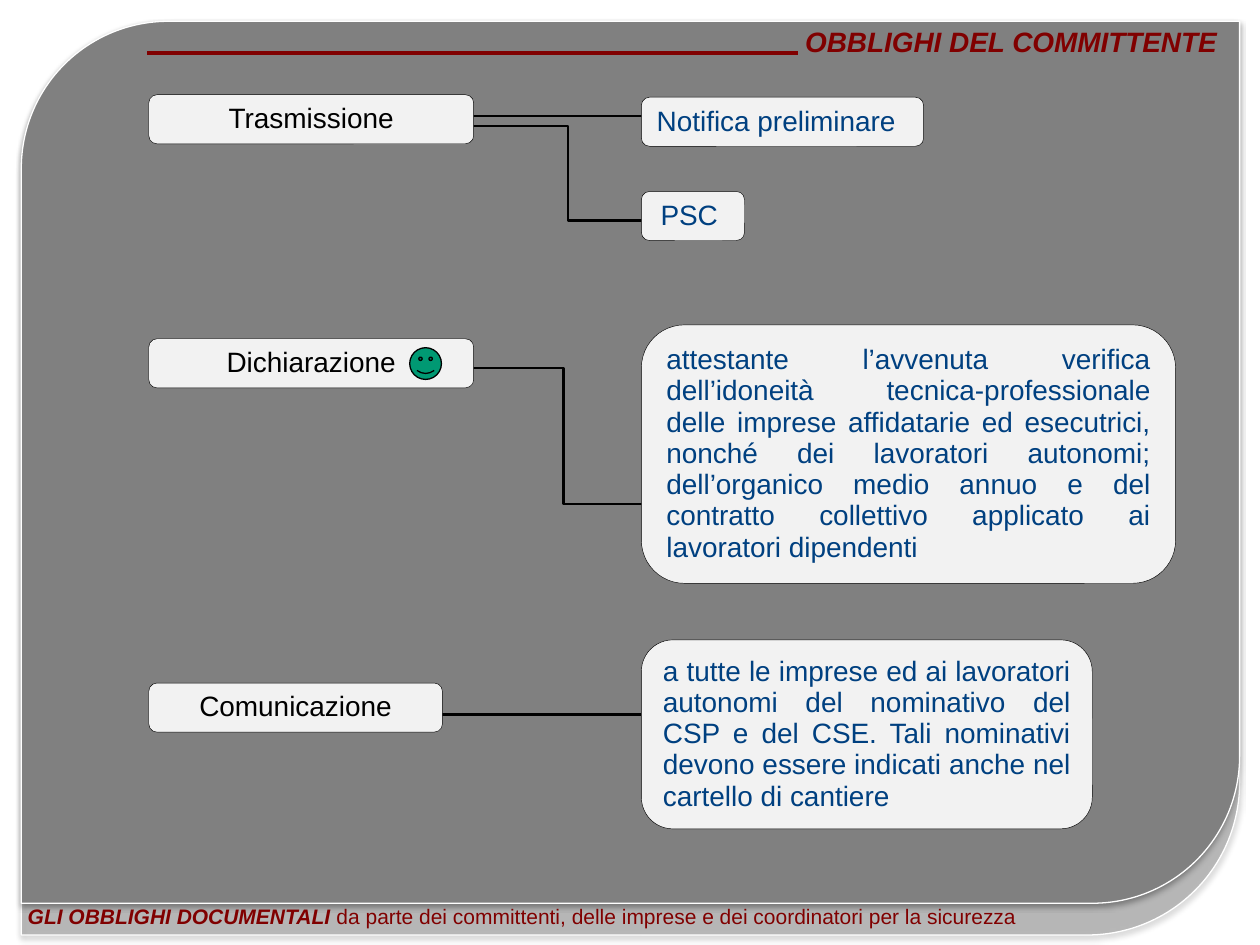
from lxml.etree import SubElement
from pptx import Presentation
from pptx.dml.color import RGBColor
from pptx.enum.shapes import MSO_CONNECTOR, MSO_SHAPE
from pptx.enum.text import MSO_ANCHOR, MSO_AUTO_SIZE, PP_ALIGN
from pptx.oxml.ns import qn
from pptx.util import Cm, Pt

BLACK = RGBColor(0x00, 0x00, 0x00)
WHITE = RGBColor(0xFF, 0xFF, 0xFF)
GREY = RGBColor(0x80, 0x80, 0x80)
LIGHT = RGBColor(0xF2, 0xF2, 0xF2)
MAROON = RGBColor(0x80, 0x00, 0x00)
BLUE = RGBColor(0x00, 0x40, 0x80)
GREEN = RGBColor(0x00, 0x99, 0x73)

LEFT_X, RIGHT_X = 3, 12.93
ROW_H = 0.99


class SlideBuilder:
    """Holds the style and the current slide; all lengths are in cm."""

    font = "Arial"
    size = 16
    spacing = 0.93

    def __init__(self, slide):
        self.slide = slide

    def style_text(self, tf, align, color, size=None, insets=(0.25, 0.13, 0.25, 0.13)):
        tf.auto_size = MSO_AUTO_SIZE.NONE
        tf.vertical_anchor = MSO_ANCHOR.MIDDLE
        tf.margin_left, tf.margin_top, tf.margin_right, tf.margin_bottom = map(Cm, insets)
        for p in tf.paragraphs:
            p.alignment = align
            p.line_spacing = self.spacing
            for r in p.runs:
                r.font.name = self.font
                r.font.size = Pt(size or self.size)
                r.font.color.rgb = color

    def shape(self, kind, x, y, w, h, fill, line, weight):
        sp = self.slide.shapes.add_shape(kind, Cm(x), Cm(y), Cm(w), Cm(h))
        sp.shadow.inherit = False
        sp.fill.solid()
        sp.fill.fore_color.rgb = fill
        sp.line.color.rgb = line
        sp.line.width = Pt(weight)
        return sp

    def panel(self, x, y, w, h, opacity=None):
        sp = self.shape(MSO_SHAPE.ROUND_2_DIAG_RECTANGLE, x, y, w, h, GREY, WHITE, 0.75)
        spPr = sp._element.spPr
        if opacity:
            color = spPr.find(qn("a:solidFill")).find(qn("a:srgbClr"))
            SubElement(color, qn("a:alpha"), val=str(opacity * 1000))
        shadow = SubElement(spPr.find(qn("a:effectLst")), qn("a:outerShdw"),
                            blurRad=str(Pt(3.1)), dist=str(Pt(1.8)),
                            dir="5400000", rotWithShape="0")
        color = SubElement(shadow, qn("a:srgbClr"), val="000000")
        SubElement(color, qn("a:alpha"), val="35000")

    def title(self, text, x, y, w, h):
        sp = self.slide.shapes.title
        sp.left, sp.top, sp.width, sp.height = Cm(x), Cm(y), Cm(w), Cm(h)
        tf = sp.text_frame
        tf.text = text
        tf.word_wrap = True
        self.style_text(tf, PP_ALIGN.RIGHT, MAROON, insets=(0.23, 0.1, 0.23, 0.1))
        font = tf.paragraphs[0].runs[0].font
        font.bold = font.italic = True
        # Bring the title in front of the panels
        sp._element.getparent().append(sp._element)

    def footer(self, strong, plain, x, y, w, h):
        tf = self.slide.shapes.add_textbox(Cm(x), Cm(y), Cm(w), Cm(h)).text_frame
        tf.word_wrap = True
        p = tf.paragraphs[0]
        r = p.add_run()
        r.text = strong
        r.font.bold = r.font.italic = True
        p.add_run().text = plain
        self.style_text(tf, PP_ALIGN.JUSTIFY, MAROON, 12, (0.23, 0.1, 0.23, 0.1))

    def connector(self, x1, y1, x2, y2, kind=MSO_CONNECTOR.ELBOW, color=BLACK, weight=1.5):
        c = self.slide.shapes.add_connector(kind, Cm(x1), Cm(y1), Cm(x2), Cm(y2))
        c.line.color.rgb = color
        c.line.width = Pt(weight)
        SubElement(c._element.spPr, qn("a:effectLst"))

    def box(self, text, x, y, w, h=ROW_H, color=BLUE, align=PP_ALIGN.CENTER,
            wrap=True, left_inset=0.25):
        sp = self.shape(MSO_SHAPE.ROUNDED_RECTANGLE, x, y, w, h, LIGHT, BLACK, 0.25)
        tf = sp.text_frame
        tf.text = text
        tf.word_wrap = wrap
        self.style_text(tf, align, color, insets=(left_inset, 0.13, 0.25, 0.13))

    def smiley(self, x, y, d):
        self.shape(MSO_SHAPE.SMILEY_FACE, x, y, d, d, GREEN, BLACK, 0.75)


def main():
    prs = Presentation()
    prs.slide_width, prs.slide_height = Cm(25.4), Cm(19.05)
    s = SlideBuilder(prs.slides.add_slide(prs.slide_layouts[5]))

    # Background panels
    s.panel(0.43, 0.43, 24.56, 18.42, opacity=40)
    s.panel(0.43, 0.43, 24.56, 17.78)

    # Footer, title and its rule
    s.footer("GLI OBBLIGHI DOCUMENTALI ",
             "da parte dei committenti, delle imprese e dei coordinatori per la sicurezza",
             0.33, 18.14, 22.02, 0.71)
    s.title("OBBLIGHI DEL COMMITTENTE", 15.88, 0.43, 8.89, 0.86)
    s.connector(16.08, 1.07, 2.97, 1.07, MSO_CONNECTOR.STRAIGHT, MAROON, 2)

    # Connectors, tucked under the boxes
    for ends in ((9.12, 2.34, 13.79, 2.34), (9.12, 2.54, 13.79, 4.45),
                 (8.92, 7.42, 13.79, 10.16), (8.28, 14.4, 12.93, 14.4)):
        s.connector(*ends)

    # Obligations on the left
    for text, y, w in (("Trasmissione", 1.91, 6.55), ("Dichiarazione", 6.83, 6.55),
                       ("Comunicazione", 13.77, 5.92)):
        s.box(text, LEFT_X, y, w, color=BLACK)
    s.smiley(8.26, 7.01, 0.64)

    # Their contents on the right
    s.box("Notifica preliminare", RIGHT_X, 1.96, 5.69, wrap=False, left_inset=0)
    s.box("PSC", RIGHT_X, 3.86, 2.08, left_inset=0.1)
    s.box("attestante l’avvenuta verifica dell’idoneità tecnica-professionale delle "
          "imprese affidatarie ed esecutrici, nonché dei lavoratori autonomi; "
          "dell’organico medio annuo e del contratto collettivo applicato ai "
          "lavoratori dipendenti", RIGHT_X, 6.55, 10.77, 5.21, align=PP_ALIGN.JUSTIFY)
    s.box("a tutte le imprese ed ai lavoratori autonomi del nominativo del CSP e del "
          "CSE. Tali nominativi devono essere indicati anche nel cartello di cantiere",
          RIGHT_X, 12.9, 9.09, 3.81, align=PP_ALIGN.JUSTIFY)

    prs.save("out.pptx")


if __name__ == "__main__":
    main()
